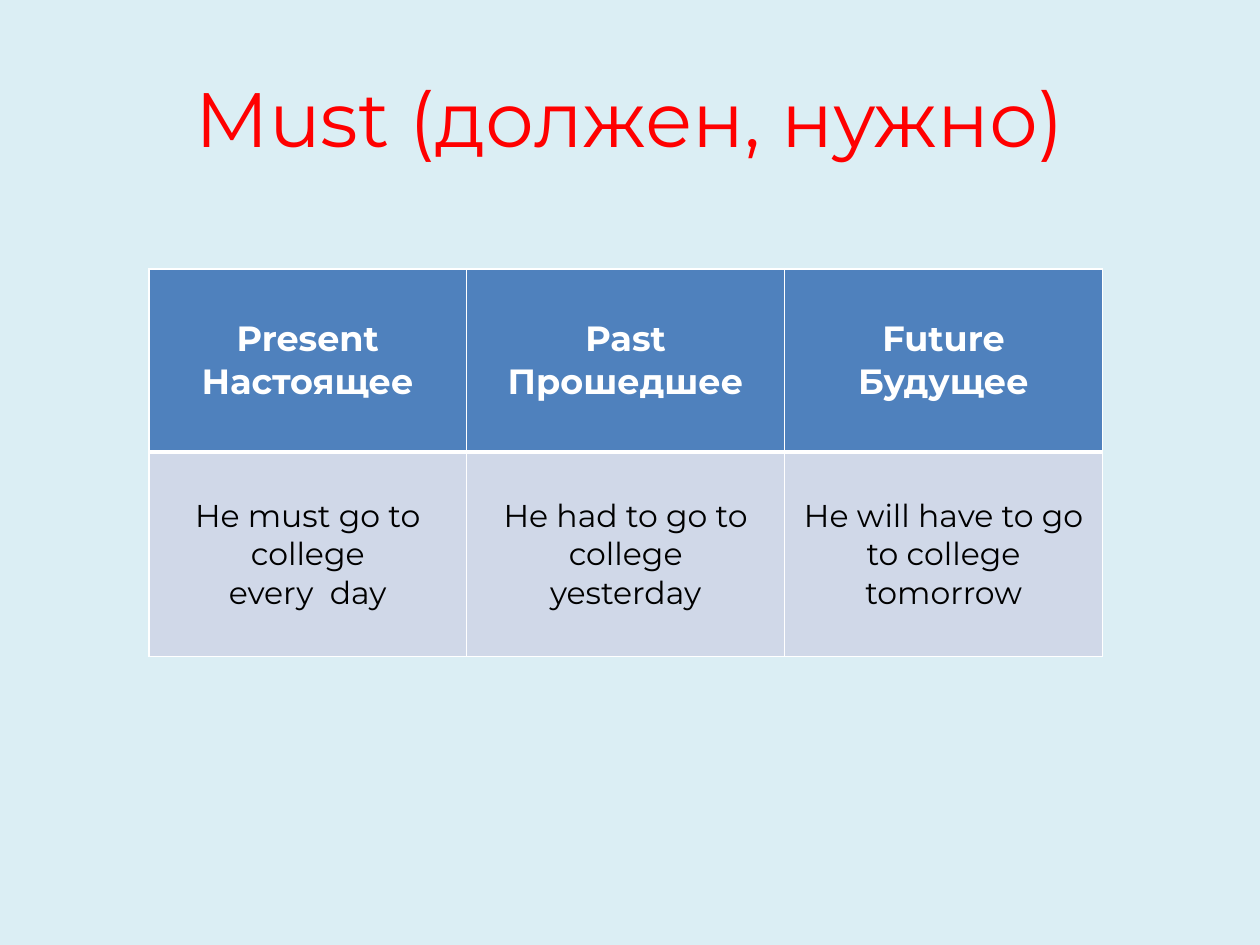
import pptx
import pptx.dml.color
import pptx.enum.text
import pptx.oxml.ns
import pptx.util
from lxml import etree

Pt = pptx.util.Pt
TENSES = [
    ("Present\nНастоящее", "He must go to college\nevery  day"),
    ("Past\nПрошедшее", "He had to go to college\nyesterday"),
    ("Future\nБудущее", "He will have to go to college\ntomorrow"),
]


def rgb(value):
    """Return the colour for a hex string."""
    return pptx.dml.color.RGBColor.from_string(value)


def write_text(frame, text, size, color, bold=False):
    """Fill a text frame with centred paragraphs, one for each line."""
    for index, line in enumerate(text.split("\n")):
        paragraph = frame.add_paragraph() if index else frame.paragraphs[0]
        paragraph.alignment = pptx.enum.text.PP_ALIGN.CENTER
        run = paragraph.add_run()
        run.text = line
        run.font.name = "Montserrat"
        run.font.size = Pt(size)
        run.font.bold = bold
        run.font.color.rgb = rgb(color)


def add_borders(cell, color, **widths):
    """Draw the cell's borders, with a width in points for each side."""
    properties = cell._tc.get_or_add_tcPr()
    for side, width in widths.items():
        line = etree.SubElement(
            properties, pptx.oxml.ns.qn(f"a:ln{side}"), w=str(Pt(width)))
        fill = etree.SubElement(line, pptx.oxml.ns.qn("a:solidFill"))
        etree.SubElement(fill, pptx.oxml.ns.qn("a:srgbClr"), val=color)


def add_title(slide, left, top, width, height):
    """Place the title in the given box."""
    title = slide.shapes.add_textbox(Pt(left), Pt(top), Pt(width), Pt(height))
    title.text_frame.word_wrap = True
    title.text_frame.vertical_anchor = pptx.enum.text.MSO_ANCHOR.MIDDLE
    write_text(title.text_frame, "Must (должен, нужно)", size=44, color="FF0000")


def add_tense_table(slide, left, top, width, row_heights):
    """Place the table of tenses, with a heading and an example for each."""
    tenses = slide.shapes.add_table(
        len(row_heights), len(TENSES),
        Pt(left), Pt(top), Pt(width), Pt(sum(row_heights))).table
    for row, height in zip(tenses.rows, row_heights):
        row.height = Pt(height)
    row_formats = [
        ("4F81BD", dict(size=20, color="FFFFFF", bold=True), dict(T=1, B=3)),
        ("D0D8E8", dict(size=18, color="000000"), dict(T=3, B=1)),
    ]
    for column, texts in enumerate(TENSES):
        tenses.columns[column].width = Pt(width / len(TENSES))
        for row, (fill, font, edges) in enumerate(row_formats):
            cell = tenses.cell(row, column)
            add_borders(cell, "FFFFFF", L=1, R=1, **edges)
            cell.fill.solid()
            cell.fill.fore_color.rgb = rgb(fill)
            cell.vertical_anchor = pptx.enum.text.MSO_ANCHOR.MIDDLE
            write_text(cell.text_frame, texts[row], **font)


def main():
    """Build the slide and save it."""
    deck = pptx.Presentation()
    deck.slide_width, deck.slide_height = Pt(720), Pt(540)
    slide = deck.slides.add_slide(deck.slide_layouts[6])
    slide.background.fill.solid()
    slide.background.fill.fore_color.rgb = rgb("DBEEF4")
    add_title(slide, 36, 21.6, 648, 90)
    add_tense_table(slide, 85, 153.6, 545.1, (104.7, 117))
    deck.save("out.pptx")


if __name__ == "__main__":
    main()
